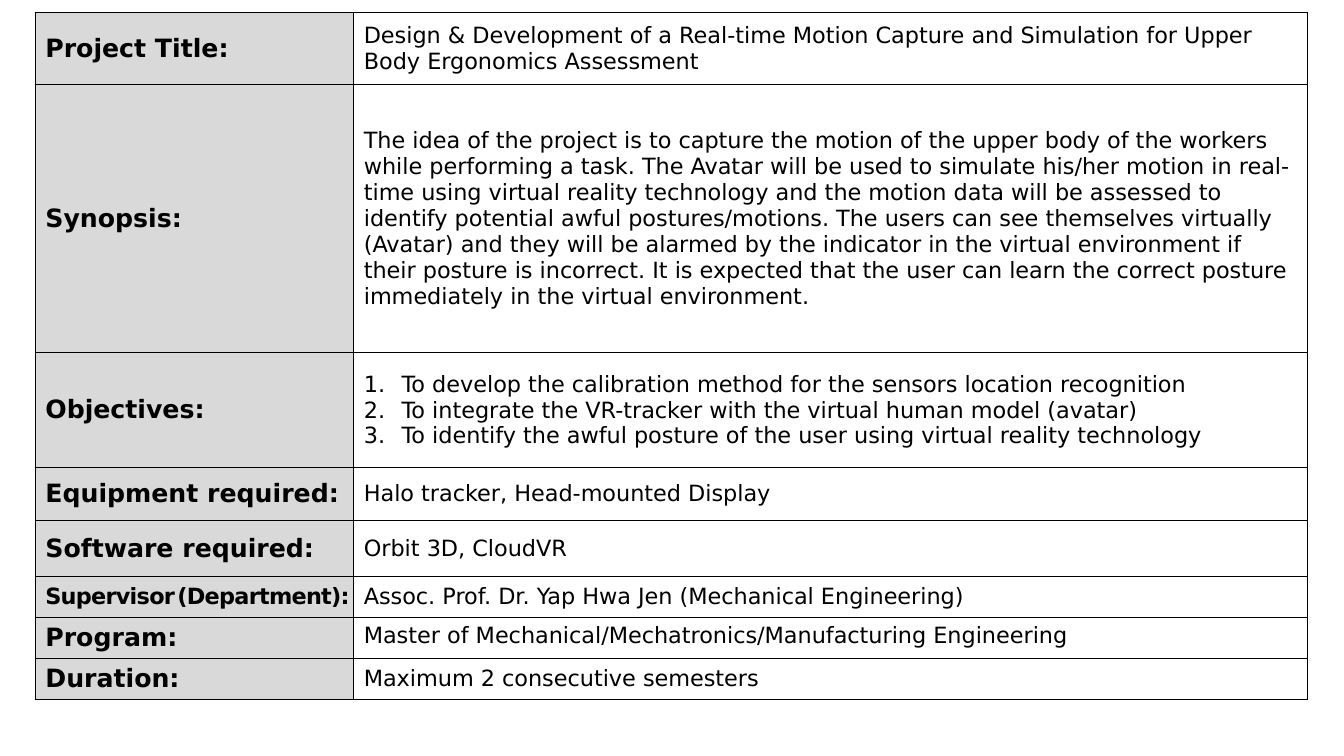
from pptx import Presentation
from pptx.dml.color import RGBColor
from pptx.enum import text as t
from pptx.oxml import parse_xml
from pptx.oxml.ns import nsdecls
from pptx.util import Pt

FONT = "DejaVu Sans"
COLORS = {"ink": "000000", "label": "D9D9D9", "paper": "FFFFFF"}
BOX = (25.2, 9, 908.5, 491)
LABEL_W = 227.5
MIDDLE, TOP = t.MSO_ANCHOR.MIDDLE, t.MSO_ANCHOR.TOP

# Row height, label, lines of the value
ROWS = [
    (51.6, "Project Title:", [
        "Design & Development of a Real-time Motion Capture and Simulation "
        "for Upper Body Ergonomics Assessment"]),
    (191.4, "Synopsis:", [
        "The idea of the project is to capture the motion of the upper body "
        "of the workers while performing a task. The Avatar will be used to "
        "simulate his/her motion in real-time using virtual reality technology "
        "and the motion data will be assessed to identify potential awful "
        "postures/motions. The users can see themselves virtually (Avatar) and "
        "they will be alarmed by the indicator in the virtual environment if "
        "their posture is incorrect. It is expected that the user can learn the "
        "correct posture immediately in the virtual environment."]),
    (82.1, "Objectives:", [
        "To develop the calibration method for the sensors location recognition",
        "To integrate the VR-tracker with the virtual human model (avatar)",
        "To identify the awful posture of the user using virtual reality "
        "technology"]),
    (37.8, "Equipment required:", ["Halo tracker, Head-mounted Display"]),
    (40, "Software required:", ["Orbit 3D, CloudVR"]),
    (29.3, "Supervisor (Department):", [
        "Assoc. Prof. Dr. Yap Hwa Jen (Mechanical Engineering)"]),
    (29.3, "Program:", [
        "Master of Mechanical/Mechatronics/Manufacturing Engineering"]),
    (29.3, "Duration:", ["Maximum 2 consecutive semesters"]),
]


def add_text(para, words, size=16, bold=False, track=0):
    """Append a run; track is the letter spacing in points."""
    run = para.add_run()
    run.text = words
    font = run.font
    font.name, font.size, font.bold = FONT, Pt(size), bold
    font.color.rgb = RGBColor.from_string(COLORS["ink"])
    if track:
        run._r.get_or_add_rPr().set("spc", str(int(track * 100)))


def number(para, indent=27):
    props = para._p.get_or_add_pPr()
    props.set("marL", str(Pt(indent)))
    props.set("indent", str(-Pt(indent)))
    props.append(parse_xml(
        f'<a:buAutoNum {nsdecls("a")} type="arabicPeriod"/>'))


def style(cell, fill, anchor=MIDDLE):
    """Set fill, anchor and a thin border on all four sides."""
    cell.vertical_anchor = anchor
    props = cell._tc.get_or_add_tcPr()
    for side in "LRTB":
        props.append(parse_xml(
            f'<a:ln{side} {nsdecls("a")} w="{Pt(1)}"><a:solidFill>'
            f'<a:srgbClr val="{COLORS["ink"]}"/></a:solidFill></a:ln{side}>'))
    cell.fill.solid()
    cell.fill.fore_color.rgb = RGBColor.from_string(COLORS[fill])


def fill_label(cell, label):
    style(cell, "label")
    para = cell.text_frame.paragraphs[0]
    if label.startswith("Supervisor"):
        # Tightened to stay on one line
        cell.margin_right = 0
        first, last = label.split()
        for words, size in ((first, 16), (" ", 5), (last, 16)):
            add_text(para, words, size, bold=True, track=-0.5)
    else:
        add_text(para, label, size=18, bold=True)


def fill_value(cell, lines, anchor):
    style(cell, "paper", anchor)
    frame = cell.text_frame
    for i, line in enumerate(lines):
        para = frame.add_paragraph() if i else frame.paragraphs[0]
        if len(lines) > 1:
            number(para)
        add_text(para, line)


def add_sheet(slide, left, top, width, height):
    """Place the project table in the given box."""
    table = slide.shapes.add_table(
        len(ROWS), 2, Pt(left), Pt(top), Pt(width), Pt(height)).table
    table.first_row = table.horz_banding = False
    for col, wide in zip(table.columns, (LABEL_W, width - LABEL_W)):
        col.width = Pt(wide)
    for i, (high, label, lines) in enumerate(ROWS):
        table.rows[i].height = Pt(high)
        fill_label(table.cell(i, 0), label)
        fill_value(table.cell(i, 1), lines,
                   TOP if label == "Program:" else MIDDLE)


def main():
    deck = Presentation()
    deck.slide_width, deck.slide_height = Pt(960), Pt(540)
    add_sheet(deck.slides.add_slide(deck.slide_layouts[6]), *BOX)
    deck.save("out.pptx")


if __name__ == "__main__":
    main()
